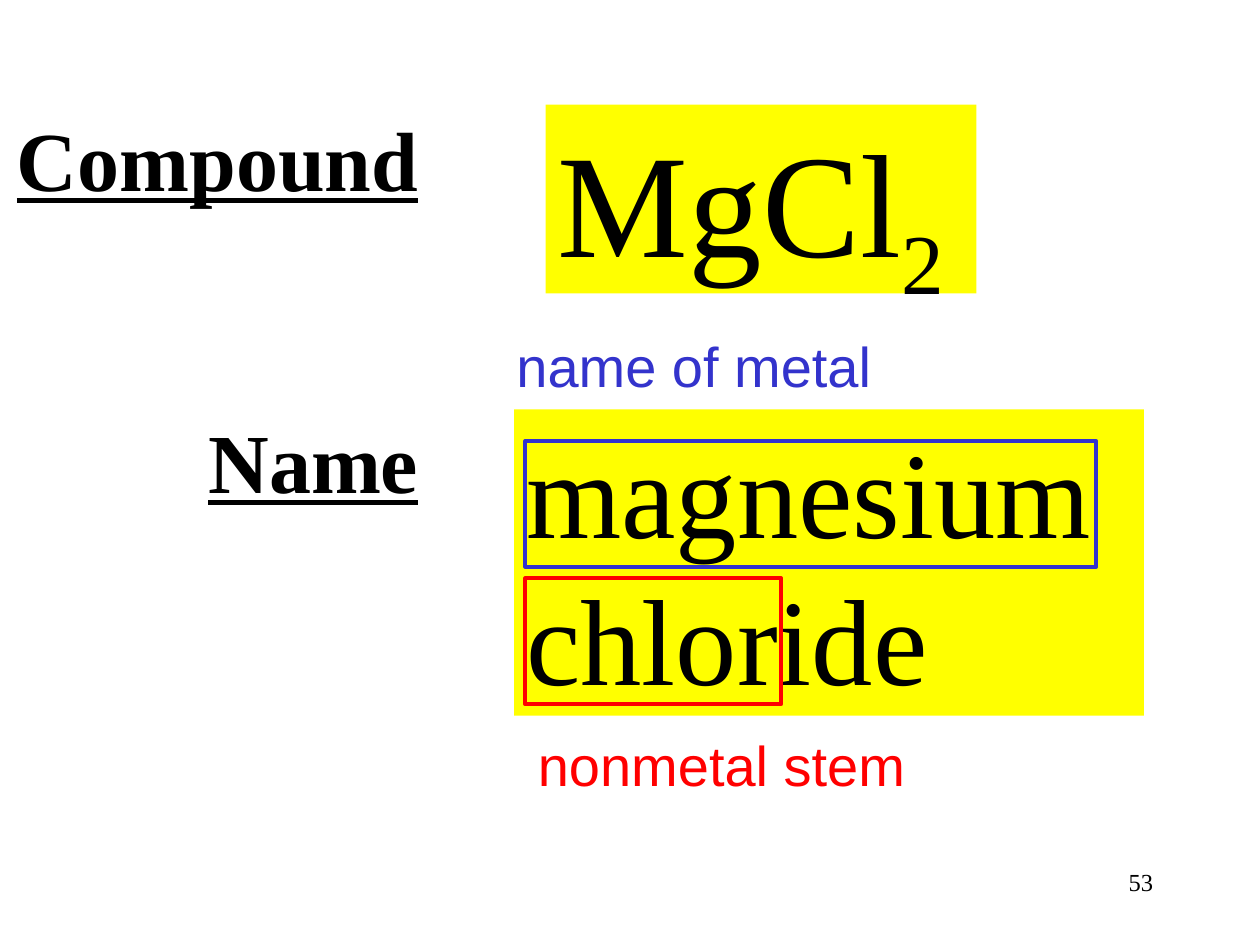
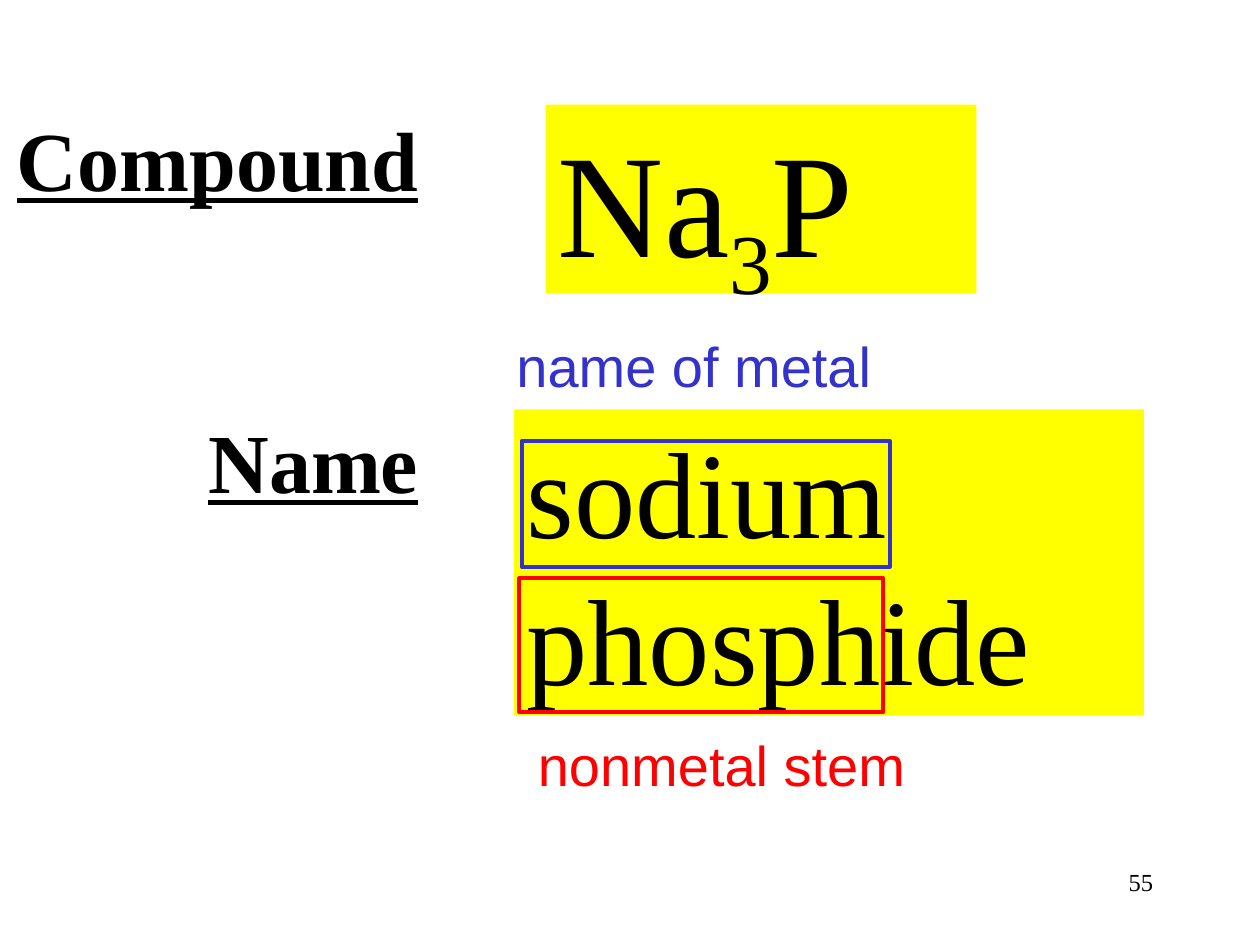
from pptx import Presentation
from pptx.dml.color import RGBColor
from pptx.enum.shapes import MSO_SHAPE
from pptx.enum.text import MSO_ANCHOR, MSO_AUTO_SIZE, PP_ALIGN
from pptx.util import Inches, Pt

YELLOW, BLUE, RED, BLACK = "FFFF00", "3333CC", "FF0000", "000000"
SERIF, SANS = "Times New Roman", "Arial"

# Shared text formats
HEADING = {"name": SERIF, "size": Pt(48), "bold": True, "underline": True}
FORMULA = {"name": SERIF, "size": Pt(84)}
COMPOUND_NAME = {"name": SERIF, "size": Pt(70)}
CAPTION = {"name": SANS, "size": Pt(32)}
PAGE_NUMBER = {"name": SERIF, "size": Pt(14)}

# Shared regions: left, top, width, height
TITLE_BOX = (0, 0, 3.42, 7.5)
FORMULA_BOX = (4.33, 0.83, 3.42, 1.5)
NAME_BOX = (4.08, 3.25, 5, 2.43)
NUMBER_BOX = (7.17, 6.83, 2.08, 0.5)

# Formula runs alternate between normal text and subscript;
# each frame is its left offset in the name box, width and height
COMPOUNDS = [
    {"number": "53", "formula": ["MgCl", "2"], "name": ["magnesium", "chloride"],
     "metal": (0.09, 4.53, 1), "stem": (0.09, 2.03, 1)},
    {"number": "55", "formula": ["Na", "3", "P"], "name": ["sodium", "phosphide"],
     "metal": (0.06, 2.92, 1), "stem": (0.04, 2.89, 1.06)},
]


def color(hex_string):
    return RGBColor.from_string(hex_string)


def inches(box):
    return [Inches(length) for length in box]


def format_font(font, values, hex_string=BLACK):
    for attribute, value in values.items():
        setattr(font, attribute, value)
    font.color.rgb = color(hex_string)


def prepare_frame(text_frame):
    values = {"word_wrap": True, "auto_size": MSO_AUTO_SIZE.NONE,
              "vertical_anchor": MSO_ANCHOR.TOP}
    for attribute, value in values.items():
        setattr(text_frame, attribute, value)
    return text_frame


def write_lines(text_frame, lines, values, hex_string=BLACK, align=PP_ALIGN.LEFT):
    prepare_frame(text_frame).text = "\n".join(lines)
    for paragraph in text_frame.paragraphs:
        paragraph.alignment = align
        for run in paragraph.runs:
            format_font(run.font, values, hex_string)


def add_rectangle(slide, box, fill=None, line=None):
    shape = slide.shapes.add_shape(MSO_SHAPE.RECTANGLE, *inches(box))
    shape.shadow.inherit = False
    if fill:
        shape.fill.solid()
        shape.fill.fore_color.rgb = color(fill)
    else:
        shape.fill.background()
    if line:
        shape.line.color.rgb = color(line)
        shape.line.width = Pt(2.25)
    else:
        shape.line.fill.background()
    return shape


def add_text(slide, box, text, values, hex_string=BLACK, align=PP_ALIGN.LEFT):
    text_box = slide.shapes.add_textbox(*inches(box))
    write_lines(text_box.text_frame, [text], values, hex_string, align)


def place_title(slide, box):
    title = slide.shapes.title
    title.left, title.top, title.width, title.height = inches(box)
    text_frame = title.text_frame
    write_lines(text_frame, ["Compound", "Name"], HEADING, align=PP_ALIGN.RIGHT)
    text_frame.margin_top = Inches(0.85)
    text_frame.paragraphs[1].space_before = Pt(115)


def add_formula(slide, box, parts):
    text_frame = prepare_frame(add_rectangle(slide, box, fill=YELLOW).text_frame)
    paragraph = text_frame.paragraphs[0]
    paragraph.alignment = PP_ALIGN.LEFT
    for index, part in enumerate(parts):
        run = paragraph.add_run()
        run.text = part
        format_font(run.font, FORMULA)
        if index % 2:
            run.font._element.set("baseline", "-25000")


def add_name(slide, box, compound):
    left, top, _, height = box
    panel = add_rectangle(slide, box, fill=YELLOW)
    write_lines(panel.text_frame, compound["name"], COMPOUND_NAME)

    # Frames around the metal name and the nonmetal stem, with captions
    marks = [
        ("stem", 1.34, RED, "nonmetal stem", 0.09, height + 0.07),
        ("metal", 0.25, BLUE, "name of metal", -0.08, -0.67),
    ]
    for key, frame_top, hex_string, caption, caption_left, caption_top in marks:
        frame_left, frame_width, frame_height = compound[key]
        add_rectangle(slide, (left + frame_left, top + frame_top,
                              frame_width, frame_height), line=hex_string)
        add_text(slide, (left + caption_left, top + caption_top, 3.25, 0.63),
                 caption, CAPTION, hex_string)


def add_compound_slide(presentation, compound):
    slide = presentation.slides.add_slide(presentation.slide_layouts[5])
    place_title(slide, TITLE_BOX)
    add_text(slide, NUMBER_BOX, compound["number"], PAGE_NUMBER, align=PP_ALIGN.RIGHT)
    add_formula(slide, FORMULA_BOX, compound["formula"])
    add_name(slide, NAME_BOX, compound)


def main():
    presentation = Presentation()
    presentation.slide_width = Inches(10)
    presentation.slide_height = Inches(7.5)
    for compound in COMPOUNDS:
        add_compound_slide(presentation, compound)
    presentation.save("out.pptx")


if __name__ == "__main__":
    main()
